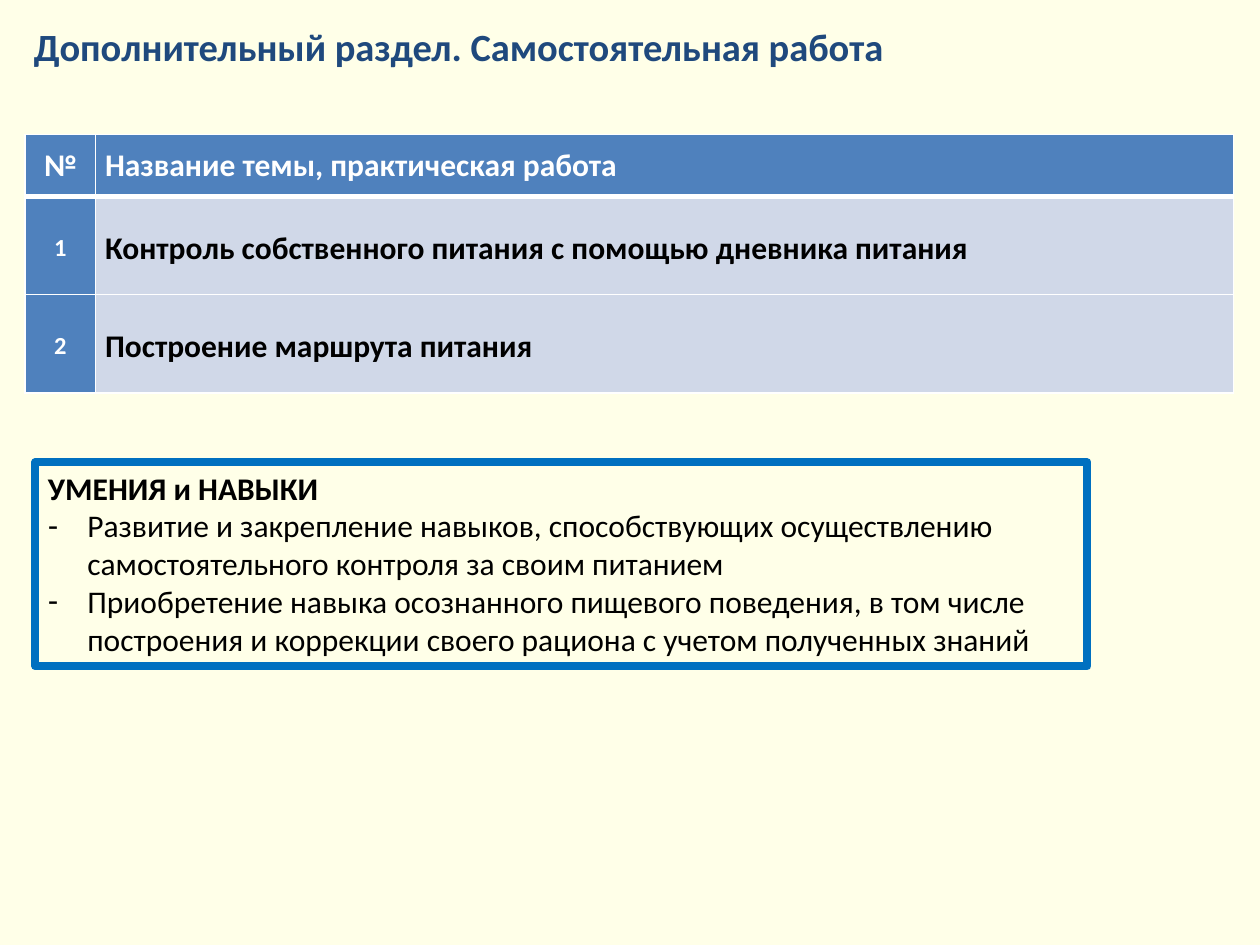
from dataclasses import dataclass

from lxml import etree
from pptx import Presentation
from pptx.dml.color import RGBColor
from pptx.enum.text import MSO_ANCHOR, MSO_AUTO_SIZE, PP_ALIGN
from pptx.oxml.ns import qn
from pptx.util import Pt

TOP, MIDDLE = MSO_ANCHOR.TOP, MSO_ANCHOR.MIDDLE
LEFT, CENTER, JUSTIFY = PP_ALIGN.LEFT, PP_ALIGN.CENTER, PP_ALIGN.JUSTIFY
NO_AUTOFIT = MSO_AUTO_SIZE.NONE


@dataclass(frozen=True)
class Theme:
    font: str = "Calibri"
    background: str = "FFFFE8"
    title: str = "1F497D"
    text: str = "000000"
    white: str = "FFFFFF"
    accent: str = "4F81BD"
    row: str = "D0D8E8"
    frame: str = "0070C0"
    title_size: float = 22
    body_size: float = 18
    number_size: float = 14


THEME = Theme()
TOPICS = [
    ("№", "Название темы, практическая работа"),
    ("1", "Контроль собственного питания с помощью дневника питания"),
    ("2", "Построение маршрута питания"),
]
SKILLS_HEADING = "УМЕНИЯ и НАВЫКИ"
SKILLS = [
    "Развитие и закрепление навыков, способствующих осуществлению "
    "самостоятельного контроля за своим питанием",
    "Приобретение навыка осознанного пищевого поведения, в том числе "
    "построения и коррекции своего рациона с учетом полученных знаний",
]


def place(sp, box):
    sp.left, sp.top, sp.width, sp.height = (Pt(v) for v in box)


def format_runs(p, size, color, bold):
    for r in p.runs:
        r.font.name = THEME.font
        r.font.size = Pt(size)
        r.font.bold = bold
        r.font.color.rgb = RGBColor.from_string(color)


def set_bullet(p, char=None, indent=0):
    pPr = p._p.get_or_add_pPr()
    pPr.set("marL", str(Pt(indent)))
    pPr.set("indent", str(-Pt(indent)))
    if char:
        etree.SubElement(pPr, qn("a:buFontTx"))
        etree.SubElement(pPr, qn("a:buChar")).set("char", char)
    else:
        etree.SubElement(pPr, qn("a:buNone"))


def set_borders(cell, top, bottom):
    tcPr = cell._tc.get_or_add_tcPr()
    for side, width in (("L", 1), ("R", 1), ("T", top), ("B", bottom)):
        ln = etree.SubElement(tcPr, qn(f"a:ln{side}"), w=str(Pt(width)))
        fill = etree.SubElement(ln, qn("a:solidFill"))
        etree.SubElement(fill, qn("a:srgbClr")).set("val", THEME.white)


def add_title(s, box, text):
    sp = s.shapes.title
    place(sp, box)
    tf = sp.text_frame
    tf.text = text
    tf.vertical_anchor = TOP
    tf.auto_size = NO_AUTOFIT
    p = tf.paragraphs[0]
    p.alignment = LEFT
    p.space_before = Pt(4.4)
    format_runs(p, THEME.title_size, THEME.title, True)


def add_topics(s, box, rows):
    number_width, header_height = 40.3, 35.3
    x, y, w, h = box
    table = s.shapes.add_table(len(rows), 2, *(Pt(v) for v in box)).table
    table.columns[0].width = Pt(number_width)
    table.columns[1].width = Pt(w - number_width)
    row_height = (h - header_height) / (len(rows) - 1)

    for i, row in enumerate(rows):
        header = i == 0
        table.rows[i].height = Pt(header_height if header else row_height)
        for j, text in enumerate(row):
            number = j == 0
            cell = table.cell(i, j)
            # A thick rule separates the header from the topics
            set_borders(cell, 3 if i == 1 else 1, 3 if header else 1)
            cell.fill.solid()
            cell.fill.fore_color.rgb = RGBColor.from_string(
                THEME.accent if header or number else THEME.row)
            cell.margin_left = cell.margin_right = Pt(5.4)
            cell.margin_top = cell.margin_bottom = 0
            cell.vertical_anchor = MIDDLE
            cell.text_frame.text = text
            p = cell.text_frame.paragraphs[0]
            p.alignment = CENTER if number else LEFT if header else JUSTIFY
            if not header:
                p.line_spacing = 1.15
            format_runs(
                p,
                THEME.number_size if number and not header else THEME.body_size,
                THEME.white if header or number else THEME.text,
                True)


def add_skills(s, box, heading, items):
    sp = s.placeholders[1]
    place(sp, box)
    sp.line.color.rgb = RGBColor.from_string(THEME.frame)
    sp.line.width = Pt(4.5)
    tf = sp.text_frame
    tf.text = "\n".join([heading, *items])
    tf.vertical_anchor = TOP
    tf.auto_size = NO_AUTOFIT
    for i, p in enumerate(tf.paragraphs):
        p.space_before = Pt(0)
        if i == 0:
            set_bullet(p)
        else:
            set_bullet(p, "-", 22.5)
        format_runs(p, THEME.body_size, THEME.text, i == 0)


def main():
    prs = Presentation()
    prs.slide_width, prs.slide_height = Pt(720), Pt(540)
    s = prs.slides.add_slide(prs.slide_layouts[1])
    s.background.fill.solid()
    s.background.fill.fore_color.rgb = RGBColor.from_string(THEME.background)

    add_title(s, (12.2, 9.4, 707.8, 39.6),
              "Дополнительный раздел. Самостоятельная работа")
    add_topics(s, (14.4, 77, 690.5, 147.6), TOPICS)
    add_skills(s, (20.2, 264.2, 601.2, 116.6), SKILLS_HEADING, SKILLS)
    prs.save("out.pptx")


if __name__ == "__main__":
    main()
